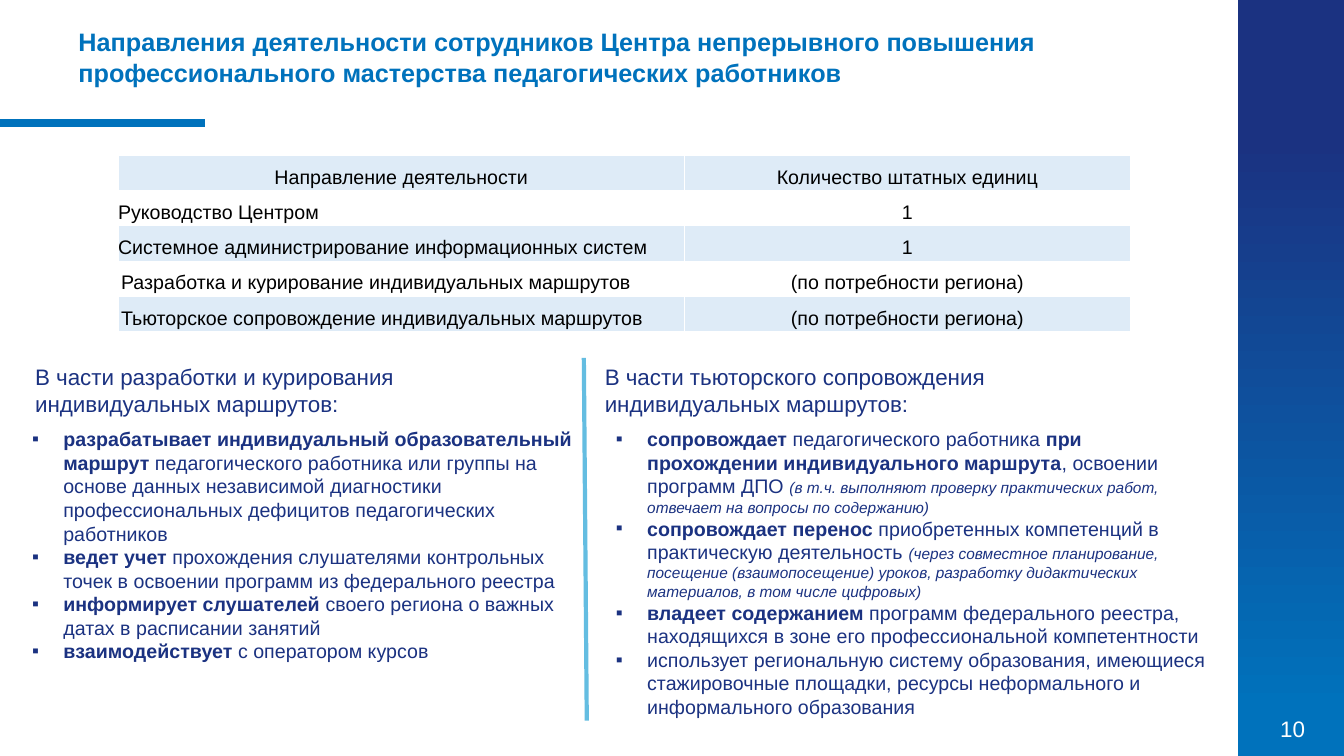
from lxml.etree import SubElement
from pptx import Presentation
from pptx.dml.color import RGBColor
from pptx.enum.shapes import MSO_CONNECTOR as Connector, MSO_SHAPE as Shape
from pptx.enum.text import MSO_ANCHOR as Anchor, PP_ALIGN as Align
from pptx.oxml.ns import qn
from pptx.util import Inches, Pt

COLORS = {name: RGBColor.from_string(value) for name, value in {
    "blue": "0072BC", "navy": "1B3281", "sky": "64BDE1",
    "band": "DEEBF7", "black": "000000", "white": "FFFFFF"}.items()}
FONT = "Arial"

deck = Presentation()
deck.slide_width, deck.slide_height = Inches(13.33), Inches(7.5)
page = deck.slides.add_slide(deck.slide_layouts[6])


def place(*shares):
    """Turn x, y pairs in percent of the slide into lengths."""
    sides = (deck.slide_width, deck.slide_height)
    return [int(share * sides[i % 2] / 100) for i, share in enumerate(shares)]


def add_text(position, paragraphs, size, color, indent=0, bullet=None,
             align=Align.LEFT, anchor=Anchor.TOP):
    """Each paragraph is a list of (style, text); style is plain, bold or note."""
    frame = page.shapes.add_textbox(*place(*position)).text_frame
    frame.word_wrap = True
    frame.vertical_anchor = anchor
    for index, spans in enumerate(paragraphs):
        para = frame.add_paragraph() if index else frame.paragraphs[0]
        para.alignment = align
        properties = para._p.get_or_add_pPr()
        properties.set("marL", str(Inches(indent)))
        if bullet:
            properties.set("indent", str(-Inches(indent)))
            SubElement(properties, qn("a:buFont"), typeface=FONT)
            SubElement(properties, qn("a:buChar"), char=bullet)
        for style, text in spans:
            span = para.add_run()
            span.text = text
            span.font.name = FONT
            span.font.size = Pt(11 if style == "note" else size)
            span.font.bold = style == "bold"
            span.font.italic = style == "note"
            span.font.color.rgb = COLORS[color]


# Side band and page number
band = page.shapes.add_shape(Shape.RECTANGLE, *place(92.12, 0, 7.88, 100))
band.shadow.inherit = False
band.line.fill.background()
band.fill.gradient()
band.fill.gradient_angle = 270
for stop, (position, color) in zip(band.fill.gradient_stops,
                                   [(0.18, "navy"), (0.94, "blue")]):
    stop.position = position
    stop.color.rgb = COLORS[color]
add_text((93.17, 93.6, 6, 5.47), [[("plain", "10")]], 16, "white",
         align=Align.CENTER, anchor=Anchor.MIDDLE)

# Title
add_text((5.1, 2.8, 79.6, 9.47),
         [[("bold", "Направления деятельности сотрудников Центра непрерывного "
                    "повышения профессионального мастерства педагогических работников")]],
         18, "blue", anchor=Anchor.MIDDLE)

# Rule under the title and divider between the columns
for ends, color, width in [((0, 16.27, 15.23, 16.27), "blue", 6),
                           ((43.44, 47.33, 43.66, 95.33), "sky", 3)]:
    line = page.shapes.add_connector(Connector.STRAIGHT, *place(*ends))
    line.line.color.rgb = COLORS[color]
    line.line.width = Pt(width)
    SubElement(line._element.spPr, qn("a:effectLst"))

# Staff table
staff = [
    ("Направление деятельности", "Количество штатных единиц"),
    ("Руководство Центром", "1"),
    ("Системное администрирование информационных систем", "1"),
    ("Разработка и курирование индивидуальных маршрутов", "(по потребности региона)"),
    ("Тьюторское сопровождение индивидуальных маршрутов", "(по потребности региона)"),
]
table = page.shapes.add_table(len(staff), 2, *place(8.78, 20.53, 75.32, 21.85)).table
table.first_row = table.horz_banding = False
for column, share in zip(table.columns, (42.16, 33.16)):
    column.width = place(share)[0]
for row_index, texts in enumerate(staff):
    for column_index, text in enumerate(texts):
        cell = table.cell(row_index, column_index)
        cell.margin_left = cell.margin_right = cell.margin_top = cell.margin_bottom = 0
        if row_index % 2:
            cell.fill.background()
        else:
            cell.fill.solid()
            cell.fill.fore_color.rgb = COLORS["band"]
        para = cell.text_frame.paragraphs[0]
        para.line_spacing = 1.5
        para.alignment = Align.CENTER if column_index or not row_index else Align.JUSTIFY
        if row_index > 2 and not column_index:
            para._p.get_or_add_pPr().set("marL", str(Inches(0.03)))
        span = para.add_run()
        span.text = text
        span.font.name = FONT
        span.font.size = Pt(14)
        span.font.color.rgb = COLORS["black"]

# Two columns of duties
route_duties = [
    [("bold", "разрабатывает индивидуальный образовательный маршрут "),
     ("plain", "педагогического работника или группы на основе данных независимой "
               "диагностики профессиональных дефицитов педагогических работников")],
    [("bold", "ведет учет "),
     ("plain", "прохождения слушателями контрольных точек в освоении программ "
               "из федерального реестра")],
    [("bold", "информирует слушателей "),
     ("plain", "своего региона о важных датах в расписании занятий")],
    [("bold", "взаимодействует"), ("plain", " с оператором курсов")],
]
tutor_duties = [
    [("bold", "сопровождает"), ("plain", " педагогического работника "),
     ("bold", "при прохождении индивидуального маршрута"),
     ("plain", ", освоении программ ДПО "),
     ("note", "(в т.ч. выполняют проверку практических работ, "
              "отвечает на вопросы по содержанию)")],
    [("bold", "сопровождает перенос"),
     ("plain", " приобретенных компетенций в практическую деятельность "),
     ("note", "(через совместное планирование, посещение (взаимопосещение) уроков, "
              "разработку дидактических материалов, в том числе цифровых)")],
    [("bold", "владеет содержанием "),
     ("plain", "программ федерального реестра, находящихся в зоне его "
               "профессиональной компетентности")],
    [("plain", "использует региональную систему образования, имеющиеся стажировочные "
               "площадки, ресурсы неформального и информального образования")],
]
for head_left, heading, list_left, list_width, list_height, duties in [
    (1.65, "В части разработки и курирования индивидуальных маршрутов:",
     1.65, 42.39, 32.8, route_duties),
    (44.04, "В части тьюторского сопровождения индивидуальных маршрутов:",
     45.09, 45.99, 40.13, tutor_duties),
]:
    add_text((head_left, 47.33, 40.06, 8.53), [[("plain", heading)]], 16, "navy", indent=0.03)
    add_text((list_left, 55.87, list_width, list_height), duties, 14, "navy",
             indent=0.31, bullet="▪")

deck.save("out.pptx")
